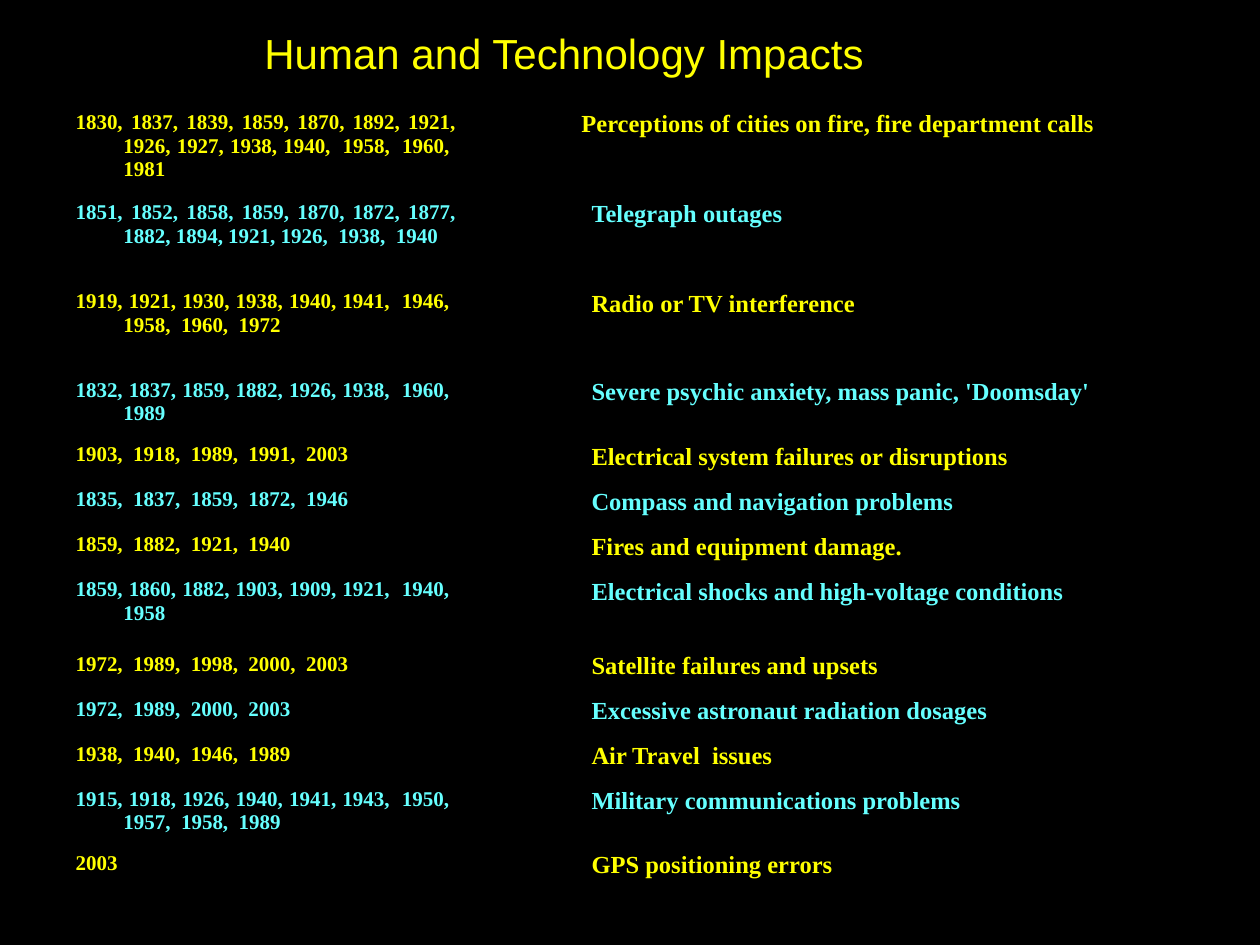
import pptx
import pptx.dml.color
import pptx.enum.text
import pptx.oxml
import pptx.oxml.ns
import pptx.util
from lxml import etree

COLORS = {"background": "000000", "yellow": "FFFF00", "cyan": "66FFFF"}
TITLE_FONT = {"name": "Arial", "size": pptx.util.Pt(24), "bold": False}
YEARS_FONT = {"name": "Times New Roman", "size": pptx.util.Pt(12), "bold": True}
IMPACT_FONT = {**YEARS_FONT, "size": pptx.util.Pt(14)}

# Years, impact, row height in single-line rows
IMPACTS = [
    ("1830, 1837, 1839, 1859, 1870, 1892, 1921, 1926, 1927, 1938, 1940,  1958,  1960,  1981",
     "Perceptions of cities on fire, fire department calls", 2),
    ("1851, 1852, 1858, 1859, 1870, 1872, 1877, 1882, 1894, 1921, 1926,  1938,  1940",
     "Telegraph outages", 1.98),
    ("1919, 1921, 1930, 1938, 1940, 1941,  1946,  1958,  1960,  1972",
     "Radio or TV interference", 1.97),
    ("1832, 1837, 1859, 1882, 1926, 1938,  1960,  1989",
     "Severe psychic anxiety, mass panic, 'Doomsday'", 1.43),
    ("1903,  1918,  1989,  1991,  2003", "Electrical system failures or disruptions", 1),
    ("1835,  1837,  1859,  1872,  1946", "Compass and navigation problems", 1),
    ("1859,  1882,  1921,  1940", "Fires and equipment damage.", 1),
    ("1859, 1860, 1882, 1903, 1909, 1921,  1940,  1958",
     "Electrical shocks and high-voltage conditions", 1.65),
    ("1972,  1989,  1998,  2000,  2003", "Satellite failures and upsets", 1),
    ("1972,  1989,  2000,  2003", "Excessive astronaut radiation dosages", 1),
    ("1938,  1940,  1946,  1989", "Air Travel  issues", 1),
    ("1915, 1918, 1926, 1940, 1941, 1943,  1950,  1957,  1958,  1989",
     "Military communications problems", 1.43),
    ("2003", "GPS positioning errors", 1),
]


def write_text(paragraph, text, font_format, color):
    run = paragraph.add_run()
    run.text = text
    for attribute, value in font_format.items():
        setattr(run.font, attribute, value)
    run.font.color.rgb = pptx.dml.color.RGBColor.from_string(COLORS[color])


def add_borders(cell):
    properties = cell._tc.get_or_add_tcPr()
    for side in ("lnL", "lnR", "lnT", "lnB"):
        line = etree.SubElement(properties, pptx.oxml.ns.qn(f"a:{side}"), w=str(pptx.util.Pt(1)))
        fill = etree.SubElement(line, pptx.oxml.ns.qn("a:solidFill"))
        etree.SubElement(fill, pptx.oxml.ns.qn("a:srgbClr"), val=COLORS["background"])


presentation = pptx.Presentation()
presentation.slide_width = pptx.util.Inches(10)
presentation.slide_height = pptx.util.Inches(7.5)
column = presentation.slide_width // 20
row = presentation.slide_height // 21

slide = presentation.slides.add_slide(presentation.slide_layouts[6])
slide.background.fill.solid()
slide.background.fill.fore_color.rgb = pptx.dml.color.RGBColor.from_string(COLORS["background"])

title = slide.shapes.add_textbox(4 * column, int(0.48 * row), 10 * column, int(1.4 * row))
title.text_frame.word_wrap = False
title.text_frame.auto_size = pptx.enum.text.MSO_AUTO_SIZE.SHAPE_TO_FIT_TEXT
write_text(title.text_frame.paragraphs[0], "Human and Technology Impacts", TITLE_FONT, "yellow")

table_height = int(sum(impact[2] for impact in IMPACTS) * row)
table = slide.shapes.add_table(
    len(IMPACTS), 2, column, int(2.33 * row), 18 * column, table_height).table
table.first_row = False
table.horz_banding = False
table.columns[0].width = int(6.44 * column)
table.columns[1].width = 18 * column - table.columns[0].width
hanging_indent = pptx.util.Inches(0.38)

for index, (years, impact, height) in enumerate(IMPACTS):
    table.rows[index].height = int(height * row)
    color = ("yellow", "cyan")[index % 2]
    years_cell, impact_cell = table.cell(index, 0), table.cell(index, 1)
    for cell, text, font_format in (
        (years_cell, years, YEARS_FONT),
        (impact_cell, impact, IMPACT_FONT),
    ):
        add_borders(cell)
        cell.fill.background()
        paragraph = cell.text_frame.paragraphs[0]
        paragraph.alignment = pptx.enum.text.PP_ALIGN.JUSTIFY
        write_text(paragraph, text, font_format, color)
    years_properties = years_cell.text_frame.paragraphs[0]._p.get_or_add_pPr()
    years_properties.set("marL", str(hanging_indent))
    years_properties.set("indent", str(-hanging_indent))
    impact_cell.margin_left = int((1.79 if index == 0 else 1.95) * column)

presentation.save("out.pptx")
